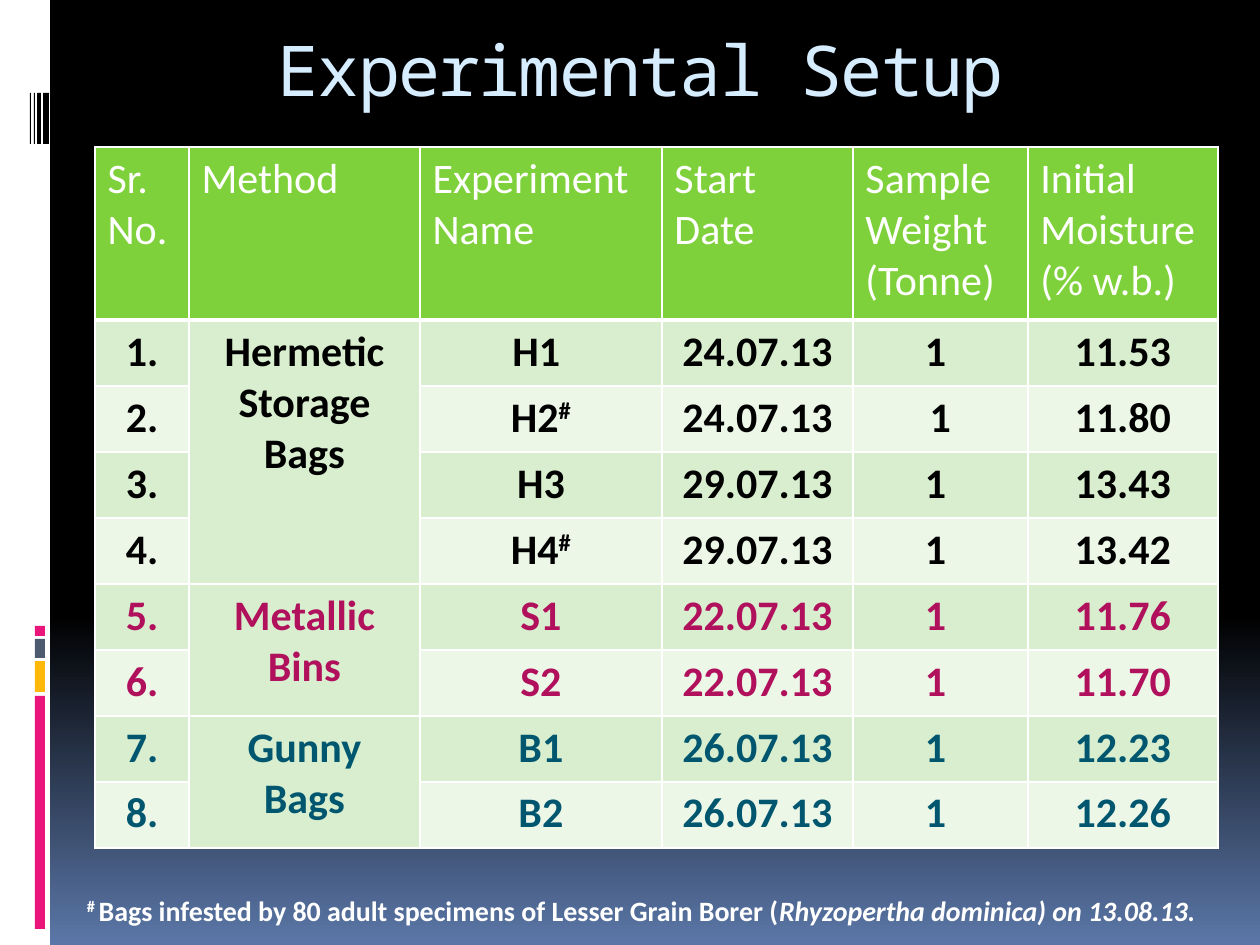
from copy import deepcopy

from lxml.etree import SubElement
from pptx import Presentation
from pptx.dml.color import RGBColor
from pptx.enum.shapes import MSO_SHAPE
from pptx.enum.text import MSO_ANCHOR, MSO_AUTO_SIZE, PP_ALIGN
from pptx.oxml.ns import qn
from pptx.util import Emu, Pt

WHITE = RGBColor(0xFF, 0xFF, 0xFF)
BLACK = RGBColor(0x00, 0x00, 0x00)
DUSK_BLUE = RGBColor(0x5B, 0x77, 0xA8)
PINK = RGBColor(0xEA, 0x15, 0x7A)
AMBER = RGBColor(0xFE, 0xB8, 0x0A)
SLATE = RGBColor(0x4E, 0x5B, 0x6F)
PALE_BLUE = RGBColor(0xD6, 0xEC, 0xFF)
GREEN = RGBColor(0x7F, 0xD1, 0x3B)
BANDS = (RGBColor(0xD8, 0xEE, 0xCE), RGBColor(0xEC, 0xF7, 0xE8))
MAGENTA = RGBColor(0xB0, 0x10, 0x5C)
TEAL = RGBColor(0x00, 0x56, 0x6E)

SIDE_BARS = [
    (0, 0, 50, 945, WHITE),
    (35, 696, 10, 233, PINK),
    (35, 661, 10, 31, AMBER),
    (35, 639, 10, 19, SLATE),
    (35, 626, 10, 10, PINK),
    (43, 93, 6, 51, BLACK),
    (37, 93, 4, 51, BLACK),
    (34, 93, 1, 51, BLACK),
    (30, 93, 1, 51, BLACK),
]
COLUMN_WIDTHS = [94, 231, 242, 191, 175, 190]
HEADER_HEIGHT, ROW_HEIGHT = 173, 66
HEADERS = ["Sr. No.", "Method", "Experiment\nName", "Start\nDate",
           "Sample\nWeight\n(Tonne)", "Initial\nMoisture (% w.b.)"]
METHODS = [
    ("Hermetic\nStorage\nBags", BLACK, [
        ("H1 ", "24.07.13", "1 ", "11.53"),
        ("H2#", "24.07.13", "1", "11.80"),
        ("H3", "29.07.13", "1 ", "13.43"),
        ("H4#", "29.07.13", "1 ", "13.42")]),
    ("Metallic\nBins", MAGENTA, [
        ("S1", "22.07.13", "1 ", "11.76"),
        ("S2", "22.07.13", "1 ", "11.70")]),
    ("Gunny\nBags", TEAL, [
        ("B1", "26.07.13", "1 ", "12.23"),
        ("B2", "26.07.13", "1 ", "12.26")]),
]


def px(length):
    return Emu(round(length * 914400 / 126))


class SlideBuilder:
    body_font = "Calibri"
    title_font = "Noto Sans Mono"

    def __init__(self, slide):
        self.slide = slide

    def background(self, start, end, hold):
        fill = self.slide.background.fill
        fill.gradient()
        fill.gradient_angle = 270
        first, last = fill.gradient_stops
        first.color.rgb, first.position = start, 0
        last.color.rgb, last.position = end, 1
        stops = self.slide.element.find(".//" + qn("a:gsLst"))
        middle = deepcopy(stops[0])
        middle.set("pos", str(hold * 1000))
        stops.insert(1, middle)

    def bar(self, left, top, width, height, color):
        shape = self.slide.shapes.add_shape(
            MSO_SHAPE.RECTANGLE, px(left), px(top), px(width), px(height))
        shape.shadow.inherit = False
        shape.fill.solid()
        shape.fill.fore_color.rgb = color
        shape.line.fill.background()

    def format_run(self, run, size, color, bold=False, italic=False, raised=False, font=None):
        run.font.name = font or self.body_font
        run.font.size = Pt(size)
        run.font.color.rgb = color
        run.font.bold = bold
        run.font.italic = italic
        if raised:
            run.font._element.set("baseline", "30000")

    def clear_margins(self, frame):
        frame.margin_left = frame.margin_right = frame.margin_top = frame.margin_bottom = 0
        frame.word_wrap = True

    def title(self, text, left, top, width, height):
        shape = self.slide.shapes.title
        shape.left, shape.top, shape.width, shape.height = map(px, (left, top, width, height))
        frame = shape.text_frame
        frame.text = text
        self.clear_margins(frame)
        frame.auto_size = MSO_AUTO_SIZE.NONE
        frame.vertical_anchor = MSO_ANCHOR.MIDDLE
        paragraph = frame.paragraphs[0]
        paragraph.alignment = PP_ALIGN.CENTER
        run = paragraph.runs[0]
        self.format_run(run, 40, PALE_BLUE, font=self.title_font)
        run.font._element.set("spc", "-100")

    def note(self, pieces, left, top, width, height):
        shape = self.slide.shapes.add_textbox(px(left), px(top), px(width), px(height))
        self.clear_margins(shape.text_frame)
        shape.text_frame.vertical_anchor = MSO_ANCHOR.MIDDLE
        for text, style in pieces:
            run = shape.text_frame.paragraphs[0].add_run()
            run.text = text
            self.format_run(run, 16, WHITE, bold=True, **style)

    def borders(self, cell, bottom):
        properties = cell._tc.get_or_add_tcPr()
        for side, width in (("L", 1), ("R", 1), ("T", 1), ("B", bottom)):
            line = SubElement(properties, qn("a:ln" + side), w=str(Pt(width)))
            fill = SubElement(line, qn("a:solidFill"))
            SubElement(fill, qn("a:srgbClr"), val=str(WHITE))

    def cell(self, cell, text, fill, color, header=False):
        self.borders(cell, 3 if header else 1)
        cell.fill.solid()
        cell.fill.fore_color.rgb = fill
        label, mark, _ = text.partition("#")
        cell.text_frame.text = label
        if mark:
            cell.text_frame.paragraphs[0].add_run().text = mark
        for paragraph in cell.text_frame.paragraphs:
            paragraph.alignment = PP_ALIGN.LEFT if header else PP_ALIGN.CENTER
            for run in paragraph.runs:
                self.format_run(run, 24, color, bold=not header, raised=run.text == "#")

    def experiment_table(self, left, top):
        row_count = sum(len(experiments) for _, _, experiments in METHODS)
        table = self.slide.shapes.add_table(
            row_count + 1, len(HEADERS), px(left), px(top), px(sum(COLUMN_WIDTHS)),
            px(HEADER_HEIGHT + row_count * ROW_HEIGHT)).table
        for column, width in zip(table.columns, COLUMN_WIDTHS):
            column.width = px(width)
        for index, row in enumerate(table.rows):
            row.height = px(ROW_HEIGHT if index else HEADER_HEIGHT)
        for index, header in enumerate(HEADERS):
            self.cell(table.cell(0, index), header, GREEN, WHITE, header=True)
        number = 1
        for method, color, experiments in METHODS:
            first = number
            for experiment in experiments:
                values = (f"{number}.", method if number == first else "", *experiment)
                for index, value in enumerate(values):
                    self.cell(table.cell(number, index), value, BANDS[(number - 1) % 2], color)
                number += 1
            table.cell(first, 1).merge(table.cell(number - 1, 1))


def main():
    presentation = Presentation()
    presentation.slide_width, presentation.slide_height = px(1260), px(945)
    builder = SlideBuilder(presentation.slides.add_slide(presentation.slide_layouts[5]))
    builder.background(BLACK, DUSK_BLUE, 65)
    for bar in SIDE_BARS:
        builder.bar(*bar)
    builder.title("Experimental Setup", 105, 21, 1071, 95)
    builder.experiment_table(95, 147)
    builder.note([
        ("# ", {"raised": True}),
        ("Bags infested by 80 adult specimens of Lesser Grain Borer (", {}),
        ("Rhyzopertha dominica) on 13.08.13.", {"italic": True}),
    ], 87, 887, 1173, 46)
    presentation.save("out.pptx")


if __name__ == "__main__":
    main()
